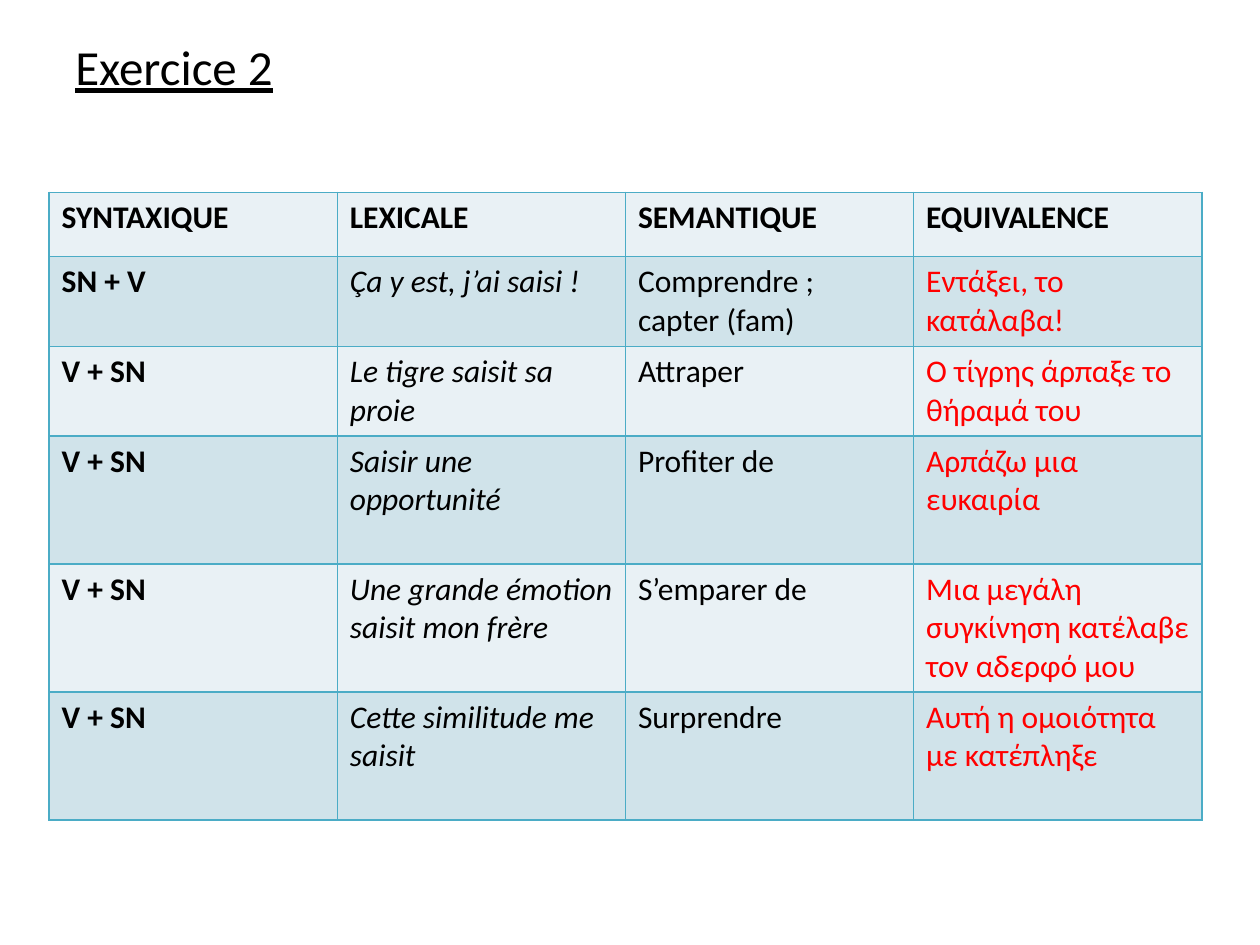
from dataclasses import dataclass

from lxml import etree
from pptx import Presentation
from pptx.dml.color import RGBColor
from pptx.oxml import ns
from pptx.util import Cm, Pt

FONT = "Calibri"
BLACK, RED = "000000", "FF0000"
BORDER = "4BACC6"
BANDS = ("E9F1F5", "D0E3EA")
COLUMN_WIDTH = 5.81


@dataclass(frozen=True)
class TextStyle:
    size: int = 18
    color: str = BLACK
    bold: bool = False
    italic: bool = False
    underline: bool = False


@dataclass(frozen=True)
class Row:
    height: float
    syntax: str
    example: str
    meaning: str
    equivalence: str


HEADING = TextStyle(bold=True)
COLUMN_STYLES = (HEADING, TextStyle(italic=True), TextStyle(), TextStyle(color=RED))

ROWS = (
    Row(1.29, "SYNTAXIQUE", "LEXICALE", "SEMANTIQUE", "EQUIVALENCE"),
    Row(1.81, "SN + V", "Ça y est, j’ai saisi !", "Comprendre ; capter (fam)",
        "Εντάξει, το κατάλαβα!"),
    Row(1.81, "V + SN", "Le tigre saisit sa proie", "Attraper",
        "Ο τίγρης άρπαξε το θήραμά του"),
    Row(2.58, "V + SN", "Saisir une opportunité", "Profiter de",
        "Αρπάζω μια ευκαιρία"),
    Row(2.58, "V + SN", "Une grande émotion saisit mon frère", "S’emparer de",
        "Μια μεγάλη συγκίνηση κατέλαβε τον αδερφό μου"),
    Row(2.58, "V + SN", "Cette similitude me saisit", "Surprendre",
        "Αυτή η ομοιότητα με κατέπληξε"),
)


def rgb(value: str) -> RGBColor:
    return RGBColor.from_string(value)


def write(frame, wording: str, style: TextStyle) -> None:
    frame.text = wording
    font = frame.paragraphs[0].runs[0].font
    font.name, font.size = FONT, Pt(style.size)
    font.bold, font.italic, font.underline = style.bold, style.italic, style.underline
    font.color.rgb = rgb(style.color)


def add_borders(cell) -> None:
    properties = cell._tc.get_or_add_tcPr()
    for position, side in enumerate(("lnL", "lnR", "lnT", "lnB")):
        line = etree.Element(ns.qn(f"a:{side}"), w=str(Pt(1)))
        fill = etree.SubElement(line, ns.qn("a:solidFill"))
        etree.SubElement(fill, ns.qn("a:srgbClr"), val=BORDER)
        properties.insert(position, line)


def add_title(slide) -> None:
    title = slide.shapes.add_textbox(Cm(1.27), Cm(0.62), Cm(22.86), Cm(17.86))
    title.text_frame.word_wrap = True
    write(title.text_frame, "Exercice 2", TextStyle(size=28, underline=True))


def add_meanings_table(slide) -> None:
    columns = len(COLUMN_STYLES)
    table = slide.shapes.add_table(
        len(ROWS), columns, Cm(0.99), Cm(3.88),
        Cm(columns * COLUMN_WIDTH), Cm(sum(row.height for row in ROWS))).table
    table.first_row = table.horz_banding = False
    for column in table.columns:
        column.width = Cm(COLUMN_WIDTH)
    for index, row in enumerate(ROWS):
        table.rows[index].height = Cm(row.height)
        wordings = (row.syntax, row.example, row.meaning, row.equivalence)
        for column, (wording, style) in enumerate(zip(wordings, COLUMN_STYLES)):
            cell = table.cell(index, column)
            write(cell.text_frame, wording, HEADING if index == 0 else style)
            cell.fill.solid()
            cell.fill.fore_color.rgb = rgb(BANDS[index % 2])
            add_borders(cell)


def main() -> None:
    deck = Presentation()
    deck.slide_width, deck.slide_height = Cm(25.4), Cm(19.05)
    slide = deck.slides.add_slide(deck.slide_layouts[6])
    add_title(slide)
    add_meanings_table(slide)
    deck.save("out.pptx")


if __name__ == "__main__":
    main()
